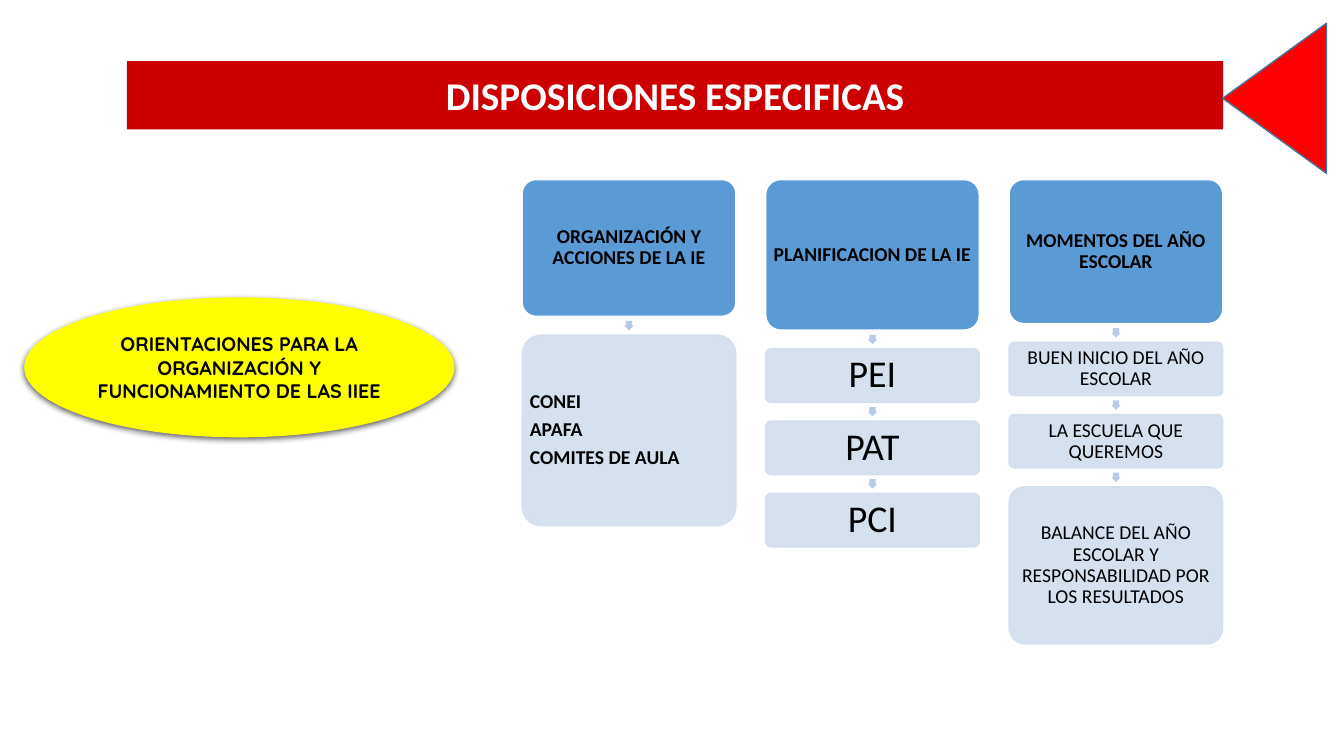
from dataclasses import dataclass

from lxml.etree import SubElement
from pptx import Presentation
from pptx.dml.color import RGBColor
from pptx.enum.shapes import MSO_SHAPE as Shape
from pptx.enum.text import MSO_ANCHOR as Anchor, MSO_AUTO_SIZE as AutoSize, PP_ALIGN as Align
from pptx.oxml.ns import qn
from pptx.util import Pt


@dataclass(frozen=True)
class Theme:
    banner: str = "CC0000"
    pointer: str = "FF0000"
    pointer_line: str = "43739E"
    topic: str = "FFFF00"
    heading: str = "5B9BD5"
    step: str = "D2DEEF"
    arrow: str = "B5CBE7"
    white: str = "FFFFFF"
    black: str = "000000"
    font: str = "Calibri"
    topic_font: str = "Quicksand"
    title_size: int = 28
    large_size: int = 27
    body_size: int = 14


def write_text(shape, text, *, size, color, font, bold=False, align=Align.CENTER,
               insets=(7.2, 3.6), line_spacing=None, space_after=0):
    frame = shape.text_frame
    frame.word_wrap = True
    frame.auto_size = AutoSize.NONE
    frame.vertical_anchor = Anchor.MIDDLE
    frame.margin_left = frame.margin_right = Pt(insets[0])
    frame.margin_top = frame.margin_bottom = Pt(insets[1])
    for index, line in enumerate(text.split("\n")):
        para = frame.paragraphs[0] if index == 0 else frame.add_paragraph()
        para.alignment = align
        para.line_spacing = line_spacing
        para.space_after = Pt(space_after)
        span = para.add_run()
        span.text = line
        span.font.size = Pt(size)
        span.font.name = font
        span.font.bold = bold
        span.font.color.rgb = RGBColor.from_string(color)


def set_alpha(color_element, percent):
    SubElement(color_element, qn("a:alpha")).set("val", str(percent * 1000))


class SlideBuilder:
    def __init__(self, deck, theme):
        self.theme = theme
        self.slide = deck.slides.add_slide(deck.slide_layouts[5])

    def title(self, text, left, top, width, height):
        title = self.slide.shapes.title
        title.left, title.top, title.width, title.height = map(Pt, (left, top, width, height))
        title.fill.solid()
        title.fill.fore_color.rgb = RGBColor.from_string(self.theme.banner)
        write_text(title, text, size=self.theme.title_size, color=self.theme.white,
                   font=self.theme.font, bold=True)

    def shape(self, kind, left, top, width, height, *, fill, line=None, rotation=0, opacity=100):
        shape = self.slide.shapes.add_shape(kind, *map(Pt, (left, top, width, height)))
        shape.shadow.inherit = False
        shape.rotation = rotation
        shape.fill.solid()
        shape.fill.fore_color.rgb = RGBColor.from_string(fill)
        if line:
            shape.line.color.rgb = RGBColor.from_string(line)
            shape.line.width = Pt(1)
        else:
            shape.line.fill.background()
        if opacity < 100:
            for color in shape.element.spPr.iter(qn("a:srgbClr")):
                set_alpha(color, opacity)
        return shape

    def topic(self, text, left, top, width, height):
        oval = self.shape(Shape.OVAL, left, top, width, height, fill=self.theme.topic)
        effects = oval.element.spPr.find(qn("a:effectLst"))
        shadow = SubElement(effects, qn("a:outerShdw"), blurRad=str(Pt(4.5)),
                            dist=str(Pt(1.5)), dir="5400000", algn="ctr", rotWithShape="0")
        color = SubElement(shadow, qn("a:srgbClr"), val=self.theme.black)
        set_alpha(color, 63)
        write_text(oval, text, size=self.theme.body_size, color=self.theme.black,
                   font=self.theme.topic_font, bold=True, insets=(0, 3.6))

    def card(self, text, left, top, width, height, *, heading=False, size=None, **text_format):
        theme = self.theme
        size = size or theme.body_size
        look = (dict(fill=theme.heading, line=theme.white) if heading
                else dict(fill=theme.step, line=theme.step, opacity=90))
        box = self.shape(Shape.ROUNDED_RECTANGLE, left, top, width, height, **look)
        box.adjustments[0] = 0.1
        write_text(box, text, **{"size": size, "color": theme.black, "font": theme.font,
                                 "bold": heading, "insets": (1.5, 1.5), "line_spacing": 0.9,
                                 "space_after": round(size * 0.35, 1), **text_format})

    def arrow(self, center_x, center_y, size):
        arrow = self.shape(Shape.RIGHT_ARROW, center_x - size / 2, center_y - size / 2,
                           size, size, fill=self.theme.arrow, rotation=90)
        arrow.adjustments[0] = 0.667

    def column(self, left, top, width, gap, cards):
        for index, (text, height, text_format) in enumerate(cards):
            if index:
                self.arrow(left + width / 2, top - gap / 2, 6.7)
            self.card(text, left, top, width, height, heading=index == 0, **text_format)
            top += height + gap


def main():
    deck = Presentation()
    deck.slide_width, deck.slide_height = Pt(960), Pt(540)
    theme = Theme()
    page = SlideBuilder(deck, theme)

    page.title("DISPOSICIONES ESPECIFICAS", 90.7, 43.7, 783, 48.7)
    page.shape(Shape.ISOSCELES_TRIANGLE, 856.8, 33.1, 107.3, 74.2,
               fill=theme.pointer, line=theme.pointer_line, rotation=270)
    page.topic("ORIENTACIONES PARA LA ORGANIZACIÓN Y FUNCIONAMIENTO DE LAS IIEE",
               17.3, 212.4, 307.4, 100)

    short = 38.2
    large = dict(size=theme.large_size)
    columns = [
        [("ORGANIZACIÓN Y ACCIONES DE LA IE", 97.6, {}),
         ("CONEI\nAPAFA\nCOMITES DE AULA", 136.2, dict(bold=True, align=Align.JUSTIFY))],
        [("PLANIFICACION DE LA IE", 107.5, {}),
         ("PEI", short, large), ("PAT", short, large), ("PCI", short, large)],
        [("MOMENTOS DEL AÑO ESCOLAR", 102.8, {}),
         ("BUEN INICIO DEL AÑO ESCOLAR", short, {}),
         ("LA ESCUELA QUE QUEREMOS", short, {}),
         ("BALANCE DEL AÑO ESCOLAR Y RESPONSABILIDAD POR LOS RESULTADOS", 112.2, {})],
    ]
    for index, cards in enumerate(columns):
        page.column(373 + index * 173.9, 128.3, 152.6, 13.4, cards)

    deck.save("out.pptx")


if __name__ == "__main__":
    main()
